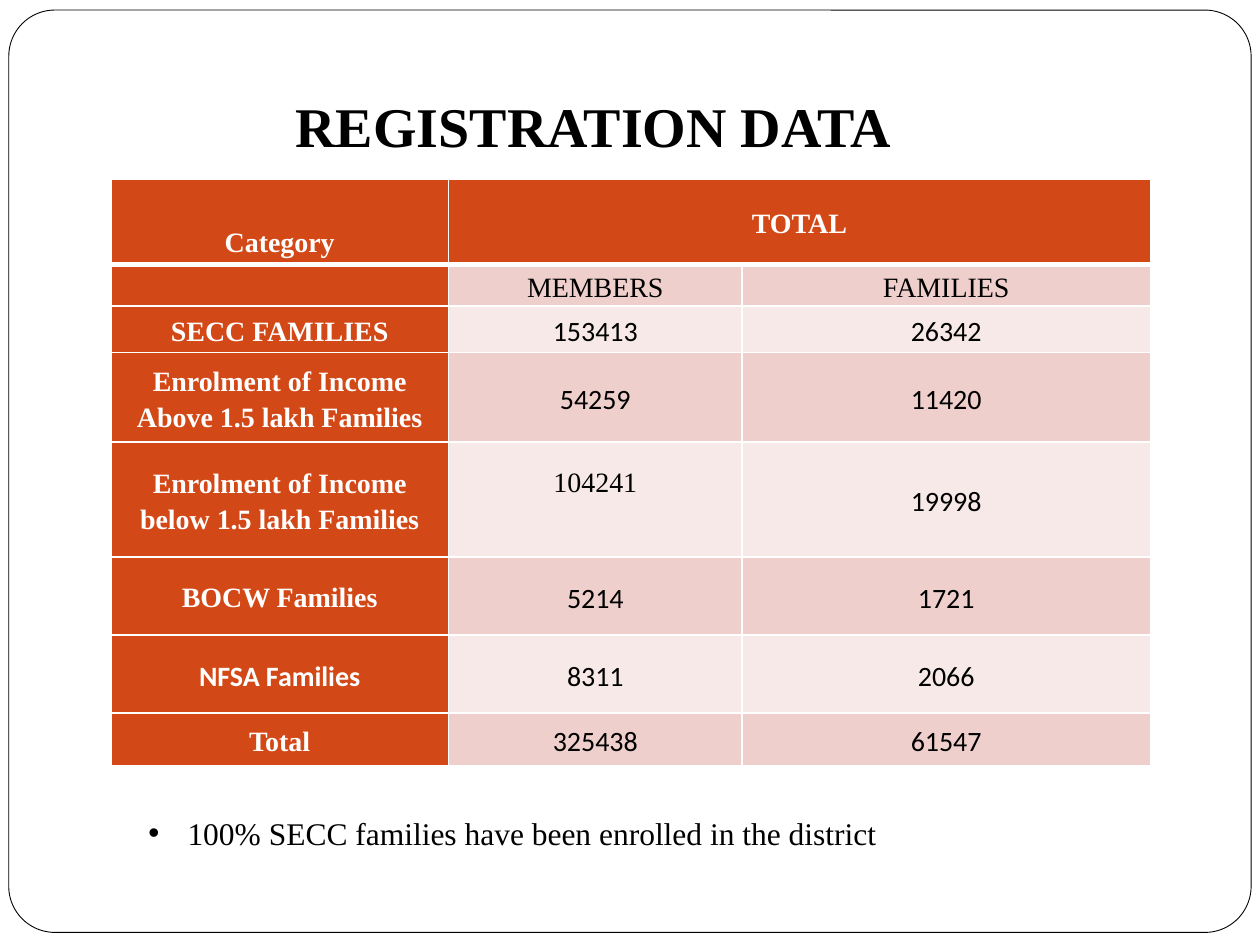
import pptx
import pptx.dml.color
import pptx.enum.shapes
import pptx.enum.text
import pptx.oxml
import pptx.oxml.ns
import pptx.util
from pptx.util import Inches

HUES = {"ink": "000000", "paper": "FFFFFF", "head": "D34817",
        "dark": "EFCFCC", "light": "F7E9E8"}
SERIF, SANS = "Times New Roman", "Calibri"
ALIGN = pptx.enum.text.PP_ALIGN
MIDDLE = pptx.enum.text.MSO_ANCHOR.MIDDLE

COLS = [2.68, 2.33, 3.24]
HIGHS = [0.68, 0.33, 0.37, 0.71, 0.91, 0.62, 0.62, 0.42]
ROWS = [
    ("Category", "TOTAL", ""),
    ("", "MEMBERS", "FAMILIES"),
    ("SECC FAMILIES", "153413", "26342"),
    ("Enrolment of Income Above 1.5 lakh Families", "54259", "11420"),
    ("Enrolment of Income below 1.5 lakh Families", "104241", "19998"),
    (" BOCW Families ", "5214", "1721"),
    ("NFSA Families", "8311", "2066"),
    ("Total", "325438", "61547"),
]
# Cells that differ from the font of their column
FONTS = {(4, 1): SERIF, (6, 0): SANS}
# Top and bottom insets that push text off the middle of its cell
SHIFTS = {(0, 0): (0.3, 0), (4, 1): (0, 0.3)}


def color(name):
    return pptx.dml.color.RGBColor.from_string(HUES[name])


def write(frame, text, size=16, font=SERIF, hue="ink", bold=False,
          align=ALIGN.CENTER, space=None):
    para = frame.paragraphs[0]
    para.alignment = align
    para.line_spacing = space
    run = para.add_run()
    run.text = text
    run.font.size = pptx.util.Pt(size)
    run.font.name = font
    run.font.bold = bold
    run.font.color.rgb = color(hue)
    return para


def edge(cell, side, width):
    """Add a white border line; call before the cell's fill is set."""
    props = cell._tc.get_or_add_tcPr()
    props.append(pptx.oxml.parse_xml(
        f'<a:ln{side} {pptx.oxml.ns.nsdecls("a")} w="{pptx.util.Pt(width)}">'
        f'<a:solidFill><a:srgbClr val="{HUES["paper"]}"/></a:solidFill>'
        f'</a:ln{side}>'))


class Deck:
    def __init__(self):
        self.file = pptx.Presentation()
        self.file.slide_width = Inches(10)
        self.file.slide_height = Inches(7.5)
        self.slide = self.file.slides.add_slide(self.file.slide_layouts[5])
        self.shapes = self.slide.shapes

    def frame(self, left, top, width, height):
        shape = self.shapes.add_shape(
            pptx.enum.shapes.MSO_SHAPE.ROUNDED_RECTANGLE,
            Inches(left), Inches(top), Inches(width), Inches(height))
        shape.adjustments[0] = 0.05
        shape.shadow.inherit = False
        shape.fill.solid()
        shape.fill.fore_color.rgb = color("paper")
        shape.line.color.rgb = color("ink")
        shape.line.width = pptx.util.Pt(0.5)

    def title(self, text, left, top, width, height):
        shape = self.shapes.title
        shape.left, shape.top = Inches(left), Inches(top)
        shape.width, shape.height = Inches(width), Inches(height)
        shape.text_frame.vertical_anchor = MIDDLE
        write(shape.text_frame, text, size=32, bold=True)
        # Bring the title in front of the frame
        shape.element.getparent().append(shape.element)

    def cell(self, grid, row, col, text):
        cell = grid.cell(row, col)
        head = row == 0 or col == 0
        for side in "LRTB":
            thick = (row, side) in ((0, "B"), (1, "T"))
            edge(cell, side, 3 if thick else 1)
        cell.fill.solid()
        band = "dark" if row % 2 else "light"
        cell.fill.fore_color.rgb = color("head" if head else band)
        cell.vertical_anchor = MIDDLE
        cell.margin_left = cell.margin_right = Inches(0.04)
        above, below = SHIFTS.get((row, col), (0, 0))
        cell.margin_top, cell.margin_bottom = Inches(above), Inches(below)
        if text:
            font = SANS if row > 1 and col else SERIF
            write(cell.text_frame, text, font=FONTS.get((row, col), font),
                  hue="paper" if head else "ink", bold=head, space=1.15)

    def table(self, rows, left, top):
        grid = self.shapes.add_table(
            len(rows), len(COLS), Inches(left), Inches(top),
            Inches(sum(COLS)), Inches(sum(HIGHS))).table
        for col, width in zip(grid.columns, COLS):
            col.width = Inches(width)
        for row, high in zip(grid.rows, HIGHS):
            row.height = Inches(high)
        for row, texts in enumerate(rows):
            for col, text in enumerate(texts):
                self.cell(grid, row, col, text)
        grid.cell(0, 1).merge(grid.cell(0, 2))

    def bullet(self, text, left, top, width, height):
        box = self.shapes.add_textbox(
            Inches(left), Inches(top), Inches(width), Inches(height))
        box.text_frame.word_wrap = True
        para = write(box.text_frame, text, size=18, align=ALIGN.JUSTIFY)
        props = para._p.get_or_add_pPr()
        props.set("marL", str(Inches(0.31)))
        props.set("indent", str(Inches(-0.31)))
        space = pptx.oxml.ns.nsdecls("a")
        props.append(pptx.oxml.parse_xml(f'<a:buFont {space} typeface="Arial"/>'))
        props.append(pptx.oxml.parse_xml(f'<a:buChar {space} char="•"/>'))


def main():
    deck = Deck()
    deck.frame(0.07, 0.08, 9.86, 7.32)
    deck.title("REGISTRATION DATA ", 1.67, 0.67, 6.17, 0.64)
    deck.table(ROWS, 0.88, 1.42)
    deck.bullet("100% SECC families have been enrolled in the district",
                1.08, 6.41, 8.25, 0.4)
    deck.file.save("out.pptx")


if __name__ == "__main__":
    main()
